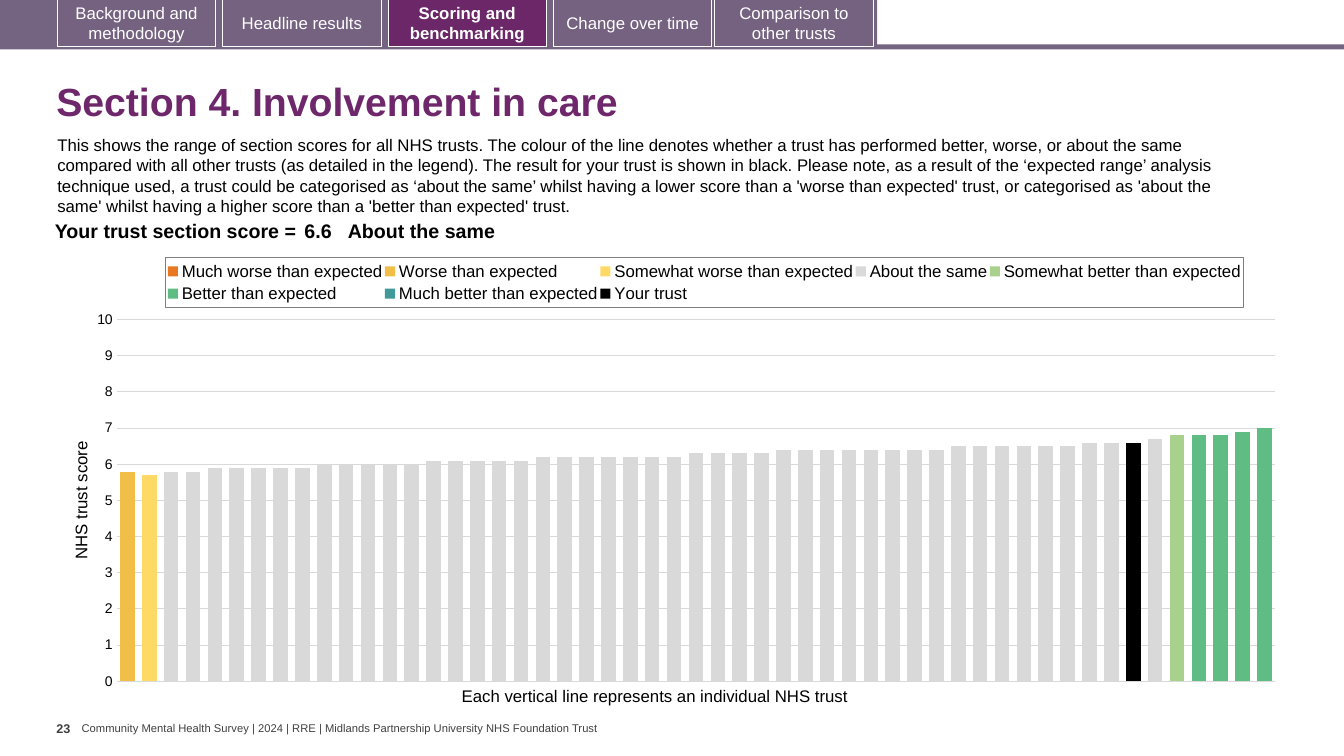
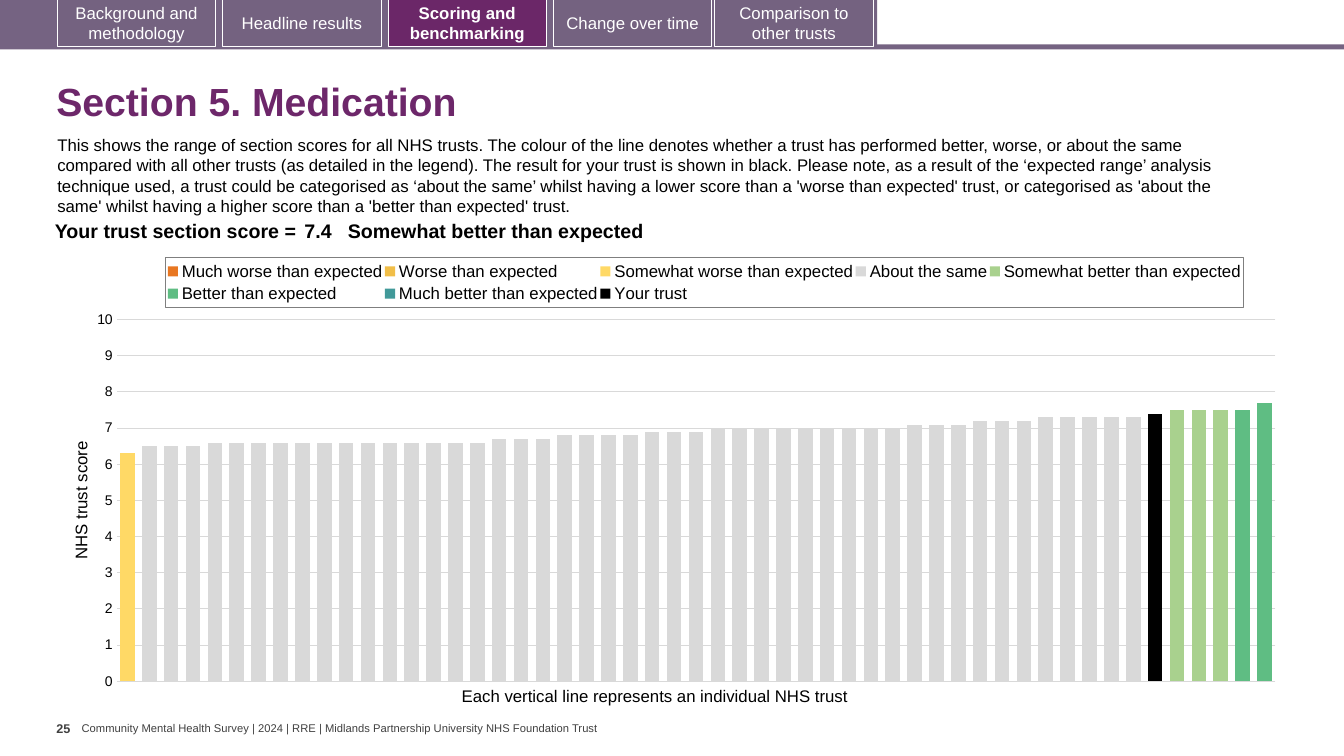
from copy import deepcopy

from lxml import etree
from pptx import Presentation, util as u
from pptx.chart.data import CategoryChartData
from pptx.dml.color import RGBColor
from pptx.enum import chart as ch, shapes, text
from pptx.oxml.ns import qn

FACE = "Arial"
BAND, TAB, LIVE, TITLE = "756382", "746280", "6B2768", "6D276A"
BLACK, WHITE, DARK, GRID, EDGE = "000000", "FFFFFF", "404040", "D9D9D9", "7F7F7F"
LEFT, MID, RIGHT = text.PP_ALIGN.LEFT, text.PP_ALIGN.CENTER, text.PP_ALIGN.RIGHT
TOP, HALF = text.MSO_ANCHOR.TOP, text.MSO_ANCHOR.MIDDLE
PAD = (0.1, 0.05, 0.1, 0.05)
COUNT = 53

TABS = [
    (0.57, "Background and methodology"),
    (2.21, "Headline results"),
    (3.85, "Scoring and benchmarking"),
    (5.49, "Change over time"),
    (7.09, "Comparison to other trusts"),
]
ACTIVE = "Scoring and benchmarking"
FOOTER = ("Community Mental Health Survey | 2024 | RRE | "
          "Midlands Partnership University NHS Foundation Trust")
INTRO = (
    "This shows the range of section scores for all NHS trusts. The colour of the line "
    "denotes whether a trust has performed better, worse, or about the same compared with "
    "all other trusts (as detailed in the legend). The result for your trust is shown in "
    "black. Please note, as a result of the ‘expected range’ analysis technique used, a "
    "trust could be categorised as ‘about the same’ whilst having a lower score than a "
    "'worse than expected' trust, or categorised as 'about the same' whilst having a higher "
    "score than a 'better than expected' trust."
)
GROUPS = {
    "Much worse than expected": "E87722",
    "Worse than expected": "F1BE48",
    "Somewhat worse than expected": "FFD966",
    "About the same": "D9D9D9",
    "Somewhat better than expected": "A9D18E",
    "Better than expected": "5FBD83",
    "Much better than expected": "419999",
    "Your trust": BLACK,
}
PAGES = [
    {
        "title": "Section 4. Involvement in care", "page": "23",
        "score": "6.6", "level": "About the same",
        "runs": {
            "Worse than expected": (0, [(5.8, 1)]),
            "Somewhat worse than expected": (1, [(5.7, 1)]),
            "About the same": (2, [(5.8, 2), (5.9, 5), (6, 5), (6.1, 5), (6.2, 7), (6.3, 4),
                                   (6.4, 8), (6.5, 6), (6.6, 3), (6.7, 1)]),
            "Somewhat better than expected": (48, [(6.8, 1)]),
            "Better than expected": (49, [(6.8, 2), (6.9, 1), (7, 1)]),
            "Your trust": (46, [(6.6, 1)]),
        },
    },
    {
        "title": "Section 5. Medication", "page": "25",
        "score": "7.4", "level": "Somewhat better than expected",
        "runs": {
            "Somewhat worse than expected": (0, [(6.3, 1)]),
            "About the same": (1, [(6.5, 3), (6.6, 13), (6.7, 3), (6.8, 4), (6.9, 3), (7, 9),
                                   (7.1, 3), (7.2, 3), (7.3, 5)]),
            "Somewhat better than expected": (47, [(7.4, 1), (7.5, 3)]),
            "Better than expected": (51, [(7.5, 1), (7.7, 1)]),
            "Your trust": (47, [(7.4, 1)]),
        },
    },
]


def tint(code):
    """Turn a hex string into a colour."""
    return RGBColor.from_string(code)


def apply(thing, form):
    """Set each attribute named in a dict."""
    for key, value in form.items():
        setattr(thing, key, value)


def style(font, size, color=BLACK, bold=False):
    """Set face, size, weight and colour of a font."""
    apply(font, {"name": FACE, "size": u.Pt(size), "bold": bold})
    font.color.rgb = tint(color)


def margins(pad):
    """Name the four insets of a frame or cell."""
    sides = ("margin_left", "margin_top", "margin_right", "margin_bottom")
    return dict(zip(sides, map(u.Inches, pad)))


def write(frame, words, size, color=BLACK, bold=False, align=LEFT):
    """Write one paragraph into a text frame."""
    para = frame.paragraphs[0]
    para.alignment = align
    run = para.add_run()
    run.text = words
    style(run.font, size, color, bold)
    return para


def label(slide, at, words, size, color=BLACK, bold=False, pad=PAD, anchor=TOP, wrap=True):
    """Add a text box and return its paragraph."""
    frame = slide.shapes.add_textbox(*map(u.Inches, at)).text_frame
    apply(frame, {"word_wrap": wrap, "vertical_anchor": anchor, **margins(pad)})
    return write(frame, words, size, color, bold)


def block(slide, at, fill, line=None):
    """Add a filled rectangle, outlined if a line colour is given."""
    shape = slide.shapes.add_shape(shapes.MSO_SHAPE.RECTANGLE, *map(u.Inches, at))
    shape.shadow.inherit = False
    shape.fill.solid()
    shape.fill.fore_color.rgb = tint(fill)
    if line:
        shape.line.color.rgb = tint(line)
        shape.line.width = u.Pt(0.75)
    else:
        shape.line.fill.background()
    return shape


def frame_page(slide, page):
    """Add the navigation tabs, footer and page number."""
    block(slide, (0, 0.44, 13.33, 0.05), BAND)
    block(slide, (0, 0, 8.7, 0.47), BAND)
    for left, name in TABS:
        live = name == ACTIVE
        tab = block(slide, (left, -0.01, 1.57, 0.47), LIVE if live else TAB, WHITE)
        apply(tab.text_frame, {"word_wrap": True, "vertical_anchor": HALF, **margins(PAD)})
        write(tab.text_frame, name, 12, WHITE, live, MID)
    label(slide, (0.81, 7.16, 5.18, 0.13), FOOTER, 8, DARK, pad=(0, 0, 0, 0),
          anchor=HALF, wrap=False)
    label(slide, (0.56, 7.1, 0.25, 0.4), page, 9, DARK, True, (0, 0.05, 0, 0.05), wrap=False)


def score_row(slide, score, level):
    """Add the one-row table with the section score."""
    grid = slide.shapes.add_table(1, 3, *map(u.Inches, (0.35, 2.15, 11.69, 0.31))).table
    apply(grid, {"first_row": False, "horz_banding": False})
    cells = [
        (2.63, "Your trust section score =", RIGHT, 0.04),
        (0.47, score, LEFT, 0.04),
        (8.59, level, LEFT, 0),
    ]
    for col, (width, words, align, side) in enumerate(cells):
        grid.columns[col].width = u.Inches(width)
        cell = grid.cell(0, col)
        cell.fill.background()
        apply(cell, margins((side, 0.04, side, 0.04)))
        write(cell.text_frame, words, 14, BLACK, True, align)


def spread(start, runs):
    """Expand (value, count) runs into a full row of values."""
    row = [None] * start + [value for value, count in runs for _ in range(count)]
    return row + [None] * (COUNT - len(row))


def place(parent, index, box, inner=False):
    """Give a chart part a manual layout."""
    for old in parent.findall(qn("c:layout")):
        parent.remove(old)
    layout = etree.Element(qn("c:layout"))
    manual = etree.SubElement(layout, qn("c:manualLayout"))
    pairs = [("layoutTarget", "inner")] if inner else []
    pairs += [("xMode", "edge"), ("yMode", "edge"), *zip("xywh", map(str, box))]
    for tag, value in pairs:
        etree.SubElement(manual, qn("c:" + tag)).set("val", value)
    parent.insert(index, layout)


def split(bars):
    """Move the last series to a second pair of axes."""
    area = bars.getparent()
    cat, val = area.find(qn("c:catAx")), area.find(qn("c:valAx"))
    more, cat2, val2 = map(deepcopy, (bars, cat, val))
    ids = (qn("c:axId"), qn("c:crossAx"))
    for part in (more, cat2, val2):
        for node in part.iter(*ids):
            node.set("val", node.get("val").lstrip("-"))
    bars.remove(bars.findall(qn("c:ser"))[-1])
    for item in more.findall(qn("c:ser"))[:-1]:
        more.remove(item)
    val2.find(qn("c:axPos")).set("val", "r")
    val2.find(qn("c:crosses")).set("val", "max")
    bars.addnext(more)
    val.addnext(val2)
    val2.addnext(cat2)
    return area


def key(chart):
    """Add the outlined legend above the bars."""
    chart.has_legend = True
    legend = chart.legend
    apply(legend, {"position": ch.XL_LEGEND_POSITION.TOP, "include_in_layout": False})
    style(legend.font, 12)
    node = legend.font and chart.element.find(".//" + qn("c:legend"))
    place(node, 1, (0.08, 0.02, 0.88, 0.11))
    props = etree.Element(qn("c:spPr"))
    line = etree.SubElement(props, qn("a:ln"), w=str(u.Pt(0.75)))
    fill = etree.SubElement(line, qn("a:solidFill"))
    etree.SubElement(fill, qn("a:srgbClr"), val=EDGE)
    node.find(qn("c:txPr")).addprevious(props)


def bars(slide, runs):
    """Add the chart of trust scores."""
    data = CategoryChartData()
    data.categories = [str(n + 1) for n in range(COUNT)]
    for name in GROUPS:
        data.add_series(name, spread(*runs.get(name, (0, []))))
    chart = slide.shapes.add_chart(ch.XL_CHART_TYPE.COLUMN_CLUSTERED,
                                   *map(u.Inches, (0.67, 2.47, 12.15, 4.44)), data).chart
    chart.has_title = False
    apply(chart.font, {"name": "Calibri", "size": u.Pt(10)})
    chart.font.color.rgb = tint(BLACK)
    plot = chart.plots[0]
    apply(plot, {"gap_width": 50, "overlap": 100, "vary_by_categories": False})
    for item, color in zip(plot.series, GROUPS.values()):
        item.invert_if_negative = False
        item.format.fill.solid()
        item.format.fill.fore_color.rgb = tint(color)
    chart.category_axis.visible = False
    axis = chart.value_axis
    apply(axis, {"minimum_scale": 0, "maximum_scale": 10, "major_unit": 1,
                 "has_major_gridlines": False, "major_tick_mark": ch.XL_TICK_MARK.NONE,
                 "tick_label_position": ch.XL_TICK_LABEL_POSITION.NONE})
    axis.format.line.fill.background()
    area = split(chart.element.find(".//" + qn("c:barChart")))
    place(area, 0, (0.04, 0.158, 0.946, 0.808), True)
    apply(axis, {"has_major_gridlines": True, "has_title": True,
                 "tick_label_position": ch.XL_TICK_LABEL_POSITION.NEXT_TO_AXIS})
    axis.tick_labels.number_format = "0"
    axis.tick_labels.number_format_is_linked = False
    style(axis.tick_labels.font, 10)
    line = axis.major_gridlines.format.line
    line.color.rgb = tint(GRID)
    line.width = u.Pt(0.75)
    write(axis.axis_title.text_frame, "NHS trust score", 12, align=MID)
    key(chart)


def section(deck, title, page, score, level, runs):
    """Build one section slide."""
    slide = deck.slides.add_slide(deck.slide_layouts[6])
    frame_page(slide, page)
    head = label(slide, (0.46, 0.67, 12.49, 0.72), title, 28, TITLE, True, anchor=HALF)
    head.line_spacing = 0.9
    label(slide, (0.47, 1.29, 12.13, 0.91), INTRO, 12)
    label(slide, (4.48, 6.75, 4.11, 0.3),
          "Each vertical line represents an individual NHS trust", 12, wrap=False)
    bars(slide, runs)
    score_row(slide, score, level)


def main():
    """Build and save the deck."""
    deck = Presentation()
    apply(deck, {"slide_width": u.Inches(13.33), "slide_height": u.Inches(7.5)})
    for page in PAGES:
        section(deck, **page)
    deck.save("out.pptx")


if __name__ == "__main__":
    main()
